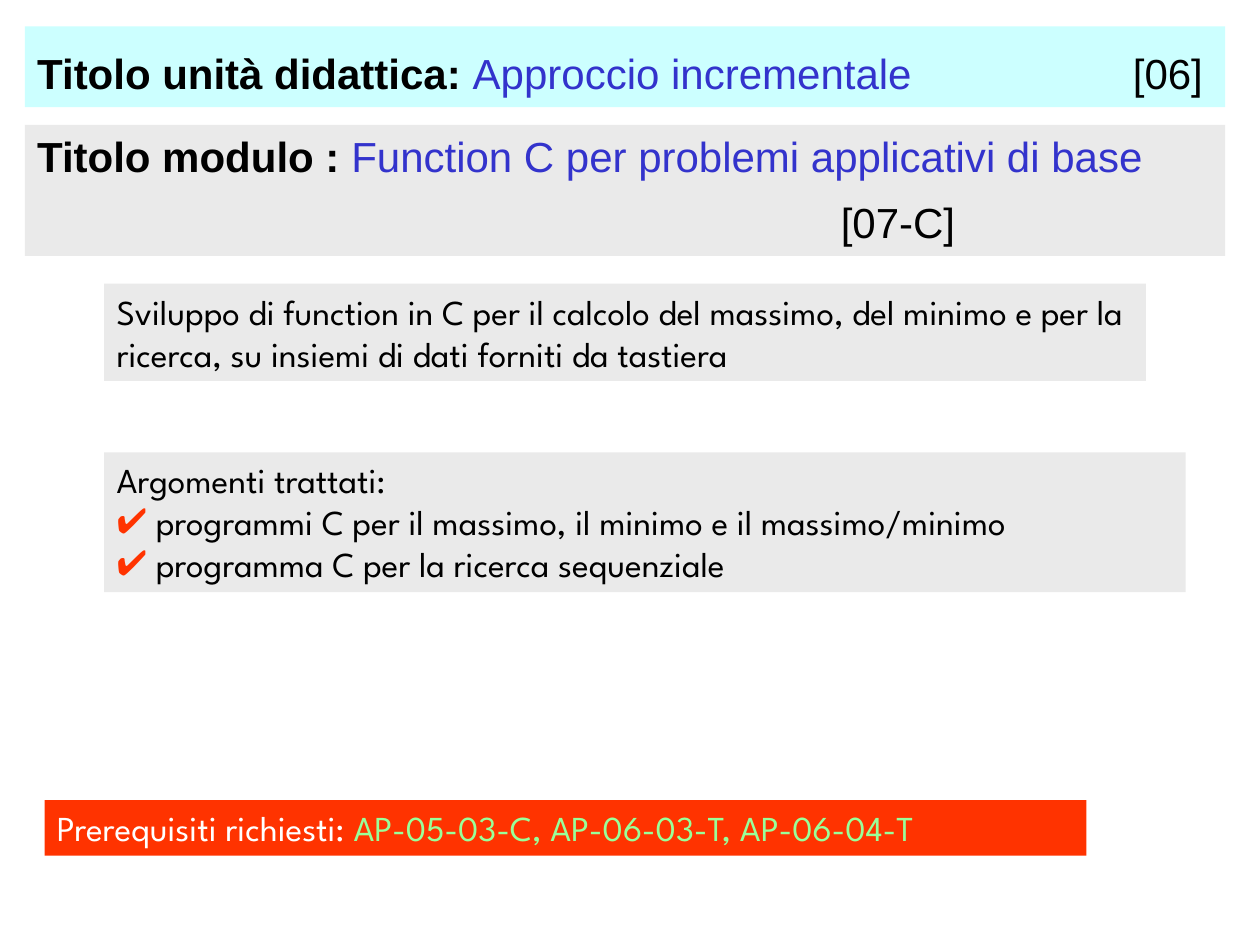
from lxml import etree
from pptx import Presentation
from pptx.dml.color import RGBColor
from pptx.enum.text import MSO_ANCHOR, MSO_AUTO_SIZE, PP_ALIGN
from pptx.oxml.ns import qn
from pptx.util import Cm, Pt

TOP, BOTTOM = MSO_ANCHOR.TOP, MSO_ANCHOR.BOTTOM
NO_AUTOFIT = MSO_AUTO_SIZE.NONE
LEFT = PP_ALIGN.LEFT

BLACK, WHITE, BLUE, RED = "000000", "FFFFFF", "3333CC", "FF3300"
CYAN, GREY, GREEN = "CCFFFF", "EAEAEA", "99FF99"
HEADING = ("Arial", 24, BOTTOM, 0.18)
BODY = ("League Spartan", 20, TOP, 0.13)


def color(hex_string):
    return RGBColor.from_string(hex_string)


def fill_box(shape, position, background, style, paragraphs):
    """Place and fill a box; each paragraph is a list of (text, colour, bold)."""
    shape.left, shape.top, shape.width, shape.height = map(Cm, position)
    shape.fill.solid()
    shape.fill.fore_color.rgb = color(background)
    font_name, size, anchor, bottom_margin = style
    frame = shape.text_frame
    frame.word_wrap = True
    frame.auto_size = NO_AUTOFIT
    frame.vertical_anchor = anchor
    frame.margin_left = frame.margin_right = Cm(0.25)
    frame.margin_top, frame.margin_bottom = Cm(0.13), Cm(bottom_margin)
    for index, runs in enumerate(paragraphs):
        paragraph = frame.add_paragraph() if index else frame.paragraphs[0]
        paragraph.alignment = LEFT
        paragraph.line_spacing = 1.0
        paragraph.space_before = Pt(0)
        paragraph.font.name = font_name
        paragraph.font.size = Pt(size)
        for text, text_color, bold in runs:
            run = paragraph.add_run()
            run.text = text
            run.font.bold = bold
            run.font.color.rgb = color(text_color)
    return frame.paragraphs


presentation = Presentation()
presentation.slide_width = Cm(25.4)
presentation.slide_height = Cm(19.05)
slide = presentation.slides.add_slide(presentation.slide_layouts[1])
title, topics = slide.placeholders
module, summary, prerequisites = [
    slide.shapes.add_textbox(0, 0, 0, 0) for _ in range(3)
]

# Headings, with their codes set at tab stops
unit_lines = fill_box(title, (0.5, 0.53, 24.2, 1.63), CYAN, HEADING, [
    [("Titolo unità didattica: ", BLACK, True),
     ("Approccio incrementale", BLUE, False),
     ("\t[06]", BLACK, False)],
])
module_lines = fill_box(module, (0.5, 2.52, 24.2, 2.64), GREY, HEADING, [
    [("Titolo modulo : ", BLACK, True),
     ("Function C per problemi applicativi di base", BLUE, False)],
    [("\t[07-C]", BLACK, False)],
])
module_lines[1].space_before = Pt(9)
for paragraph, position, alignment in (
    (unit_lines[0], 23.5, "r"),
    (module_lines[1], 16.2, "l"),
):
    tab_list = etree.SubElement(paragraph._p.get_or_add_pPr(), qn("a:tabLst"))
    etree.SubElement(tab_list, qn("a:tab"), pos=str(Cm(position)), algn=alignment)

# Summary, topics and prerequisites
fill_box(summary, (2.1, 5.72, 21, 1.96), GREY, BODY, [
    [("Sviluppo di function in C per il calcolo del massimo, del minimo e per la "
      "ricerca, su insiemi di dati forniti da tastiera", BLACK, False)],
])
topic_lines = fill_box(topics, (2.1, 9.12, 21.8, 2.82), GREY, BODY, [
    [("Argomenti trattati:", BLACK, False)],
    [("programmi C per il massimo, il minimo e il massimo/minimo", BLACK, False)],
    [("programma C per la ricerca sequenziale", BLACK, False)],
])
fill_box(prerequisites, (0.9, 16.13, 21, 1.12), RED, BODY, [
    [("Prerequisiti richiesti: ", WHITE, False),
     ("AP-05-03-C, AP-06-03-T, AP-06-04-T", GREEN, False)],
])

# Red check marks before every topic, none before the lead-in
for index, paragraph in enumerate(topic_lines):
    indent = Cm(0.79) if index else 0
    properties = paragraph._p.get_or_add_pPr()
    properties.set("marL", str(indent))
    properties.set("indent", str(-indent))
    if index:
        bullet_color = etree.SubElement(properties, qn("a:buClr"))
        etree.SubElement(bullet_color, qn("a:srgbClr"), val=RED)
        etree.SubElement(properties, qn("a:buChar"), char="✔")
    else:
        etree.SubElement(properties, qn("a:buNone"))
    # Default run properties close the paragraph properties
    properties.append(properties.find(qn("a:defRPr")))
for paragraph in (unit_lines[0], module_lines[1]):
    properties = paragraph._p.pPr
    properties.append(properties.find(qn("a:defRPr")))

presentation.save("out.pptx")
